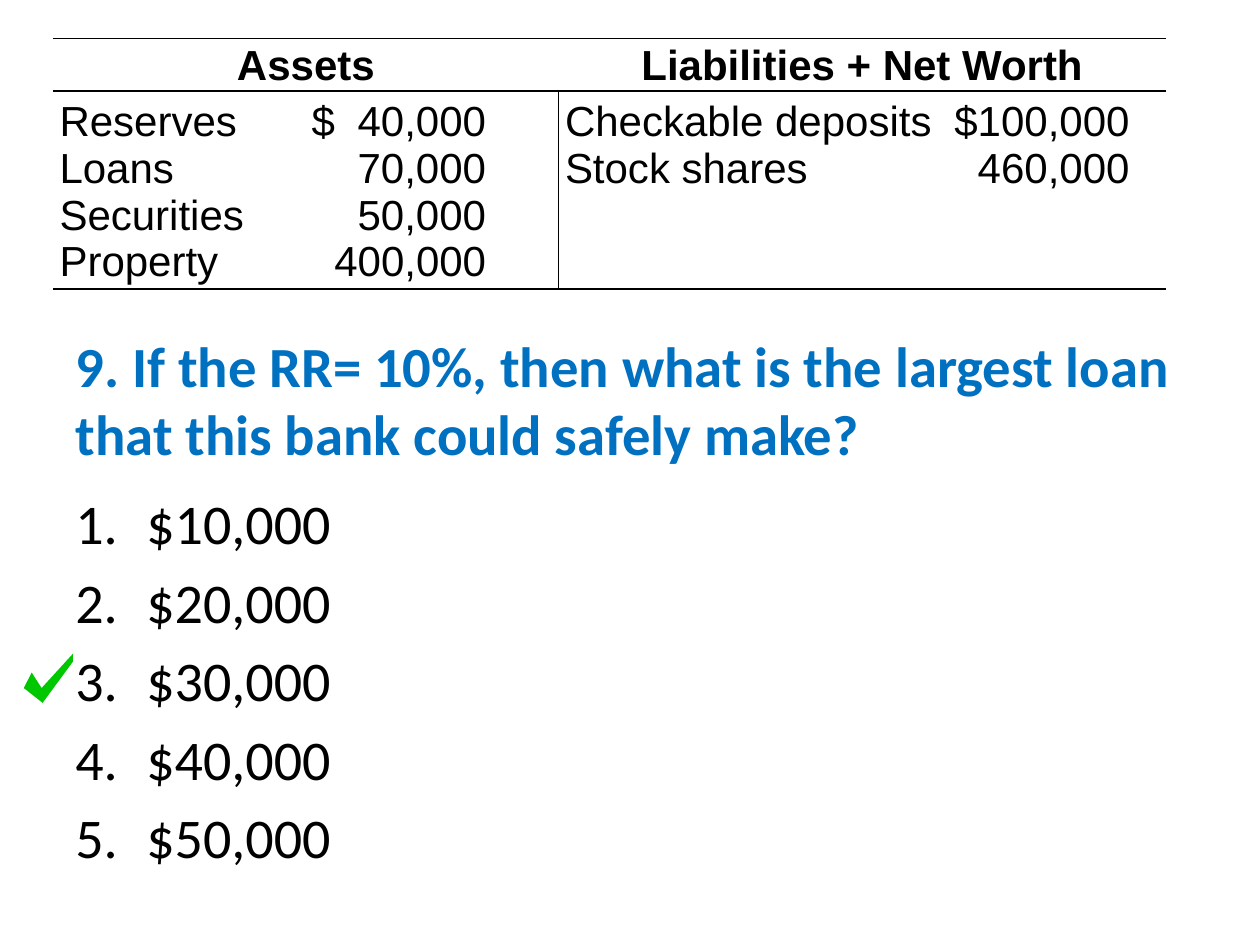
import pptx
import pptx.dml.color
import pptx.enum.text
import pptx.oxml
import pptx.oxml.ns
import pptx.util
from pptx.util import Cm

COLORS = {"text": "000000", "question": "0070C0", "check": "00C800", "line": "000000"}
PLAIN_TABLE = "{2D5ABB26-0587-4C30-8999-92F81FD0307C}"
ALIGN = pptx.enum.text.PP_ALIGN
ANCHOR = pptx.enum.text.MSO_ANCHOR

HEADINGS = ["Assets", "Liabilities + Net Worth"]
ENTRIES = [
    ["Reserves\t$\t40,000", "Loans\t\t70,000", "Securities\t\t50,000", "Property\t\t400,000"],
    ["Checkable deposits\t$100,000", "Stock shares\t460,000"],
]
TABS = [[(5.08, "l"), (8.6, "r")], [(11.38, "r")]]
QUESTION = "9. If the RR= 10%, then what is the largest loan that this bank could safely make?"
ANSWERS = ["$10,000", "$20,000", "$30,000", "$40,000", "$50,000"]
CHECK_POINTS = [(0.64, 13.56), (0.48, 13.87), (0.86, 14.17),
                (1.47, 13.34), (1.47, 13.18), (0.84, 13.87)]


def set_values(target, values):
    for name, value in values.items():
        setattr(target, name, value)


def rgb(name):
    return pptx.dml.color.RGBColor.from_string(COLORS[name])


def write_span(para, text, color, **values):
    span = para.add_run()
    span.text = text
    set_values(span.font, values)
    span.font.color.rgb = rgb(color)


def add_xml(parent, xml):
    namespace = pptx.oxml.ns.nsdecls("a")
    tag, rest = xml.split(" ", 1)
    parent.append(pptx.oxml.parse_xml(f"{tag} {namespace} {rest}"))


def write_lines(frame, lines, color, **values):
    for index, line in enumerate(lines):
        para = frame.paragraphs[0] if index == 0 else frame.add_paragraph()
        write_span(para, line, color, **values)


def add_question(page):
    title = page.shapes.title
    set_values(title, {"left": Cm(1.27), "top": Cm(6.98), "width": Cm(22.86), "height": Cm(2.11)})
    frame = title.text_frame
    set_values(frame, {"word_wrap": True, "vertical_anchor": ANCHOR.MIDDLE,
                       "auto_size": pptx.enum.text.MSO_AUTO_SIZE.NONE})
    para = frame.paragraphs[0]
    para.alignment = ALIGN.LEFT
    write_span(para, QUESTION, "question", name="Calibri",
               size=pptx.util.Pt(32.4), bold=True)


def format_cell(cell, margins, edges):
    set_values(cell, dict(zip(("margin_left", "margin_top", "margin_right", "margin_bottom"),
                              map(Cm, margins))))
    properties = cell._tc.get_or_add_tcPr()
    for edge in edges:
        add_xml(properties, f'<a:ln{edge} w="12700"><a:solidFill>'
                            f'<a:srgbClr val="{COLORS["line"]}"/></a:solidFill></a:ln{edge}>')
    cell.fill.background()


def add_balance_sheet(page):
    frame = page.shapes.add_table(2, 2, Cm(1.07), Cm(0.78), Cm(22.43), Cm(5.04))
    table = frame.table
    set_values(table, {"first_row": False, "horz_banding": False})
    table._tbl.tblPr[0].text = PLAIN_TABLE
    for row, height in zip(table.rows, (1.05, 3.99)):
        row.height = Cm(height)
    for column, width in zip(table.columns, (10.19, 12.24)):
        column.width = Cm(width)
    font = {"name": "Arial", "size": pptx.util.Pt(24)}
    for index, inner_edge in enumerate("RL"):
        heading, body = table.cell(0, index), table.cell(1, index)
        format_cell(heading, (0, 0.08, 0, 0.03), "TB")
        write_lines(heading.text_frame, [HEADINGS[index]], "text", bold=True, **font)
        heading.text_frame.paragraphs[0].alignment = ALIGN.CENTER
        format_cell(body, (0.13, 0.15, 0, 0.05), inner_edge + "TB")
        write_lines(body.text_frame, ENTRIES[index], "text", bold=False, **font)
        stops = "".join(f'<a:tab pos="{Cm(place)}" algn="{side}"/>' for place, side in TABS[index])
        for para in body.text_frame.paragraphs:
            add_xml(para._p.get_or_add_pPr(), f"<a:tabLst >{stops}</a:tabLst>")


def add_answers(page):
    box = page.shapes.add_textbox(Cm(1.27), Cm(9.73), Cm(11), Cm(8.69))
    box.text_frame.word_wrap = True
    write_lines(box.text_frame, ANSWERS, "text", name="Calibri", size=pptx.util.Pt(32))
    for para in box.text_frame.paragraphs:
        para.space_before = pptx.util.Pt(6.4)
        properties = para._p.get_or_add_pPr()
        properties.set("marL", str(Cm(1.43)))
        properties.set("indent", str(-Cm(1.43)))
        add_xml(properties, '<a:buFont typeface="+mj-lt"/>')
        add_xml(properties, '<a:buAutoNum type="arabicPeriod"/>')


def add_check(page):
    points = [(Cm(x), Cm(y)) for x, y in CHECK_POINTS]
    builder = page.shapes.build_freeform(*points[0])
    builder.add_line_segments(points[1:], close=True)
    check = builder.convert_to_shape()
    check.shadow.inherit = False
    check.fill.solid()
    check.fill.fore_color.rgb = rgb("check")
    check.line.fill.background()


def main():
    deck = pptx.Presentation()
    set_values(deck, {"slide_width": Cm(25.4), "slide_height": Cm(19.05)})
    page = deck.slides.add_slide(deck.slide_layouts[5])
    add_question(page)
    add_balance_sheet(page)
    add_answers(page)
    add_check(page)
    deck.save("out.pptx")


if __name__ == "__main__":
    main()
